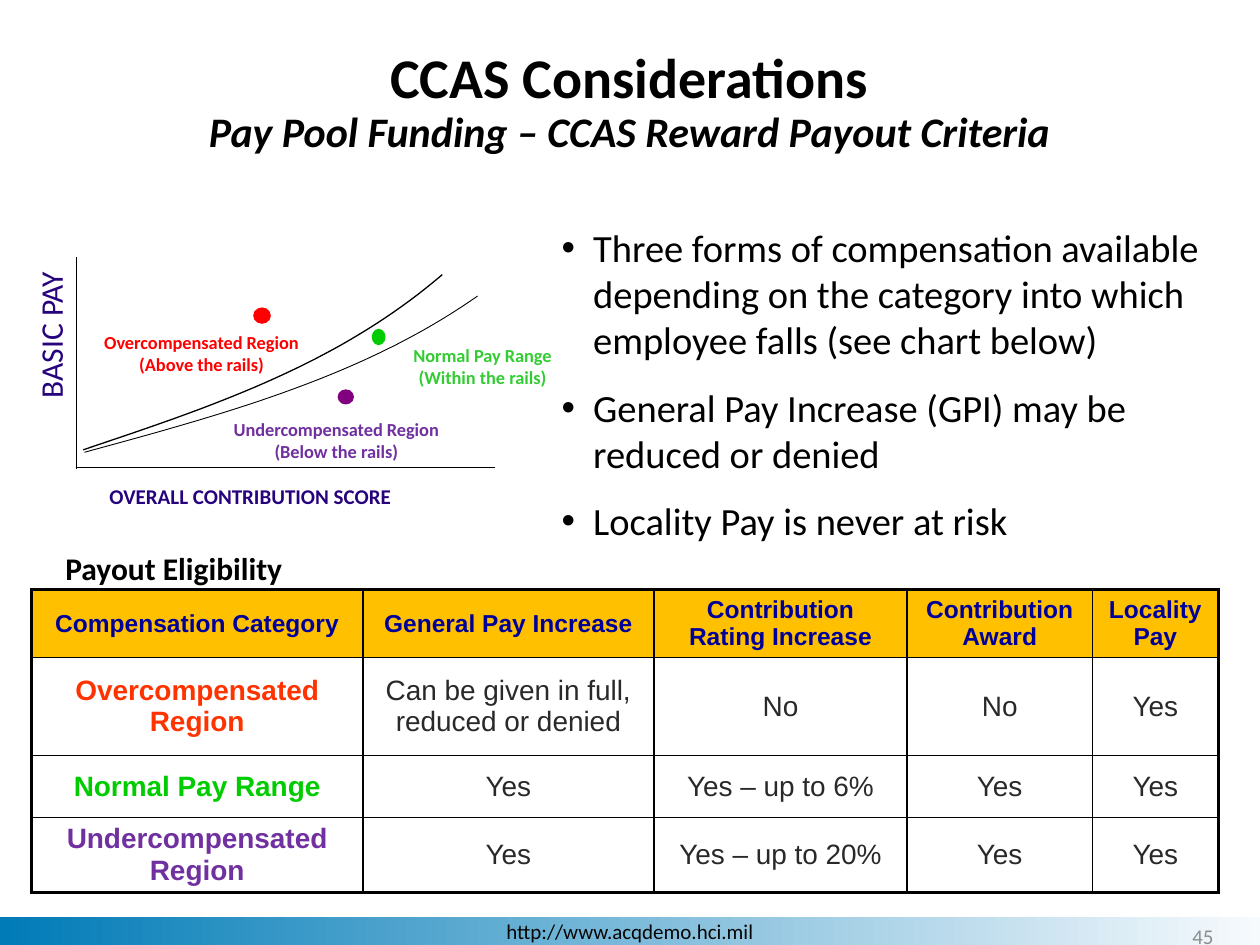
from pptx import Presentation
from pptx.dml.color import RGBColor
from pptx.enum.shapes import MSO_CONNECTOR, MSO_SHAPE
from pptx.enum.text import MSO_ANCHOR, PP_ALIGN
from pptx.oxml.ns import qn
from pptx.util import Inches, Pt
from lxml.etree import SubElement

COLORS = {
    "black": "000000", "footer": "060606", "number": "8C8C8C",
    "bar_dark": "007BB7", "bar_light": "F7FAFD", "axis": "27027D",
    "over": "FF0000", "normal": "33CC33", "under": "7030A0",
    "under_dot": "800080", "normal_dot": "00CC00", "over_row": "FF3300",
    "header_fill": "FFC000", "header": "000099", "cell": "292929",
}
ROWS = [
    ["Compensation Category", "General Pay Increase", "Contribution Rating Increase",
     "Contribution Award", "Locality Pay"],
    ["Overcompensated Region", "Can be given in full, reduced or denied", "No", "No", "Yes"],
    ["Normal Pay Range", "Yes", "Yes – up to 6%", "Yes", "Yes"],
    ["Undercompensated Region", "Yes", "Yes – up to 20%", "Yes", "Yes"],
]
CATEGORY_COLORS = [None, "over_row", "normal_dot", "under"]
COLUMN_WIDTHS = [2.63, 2.31, 2.01, 1.47, 1]
ROW_HEIGHTS = [0.49, 0.78, 0.49, 0.54]
BULLETS = [
    "Three forms of compensation available depending on the category into which "
    "employee falls (see chart below)",
    "General Pay Increase (GPI) may be reduced or denied",
    "Locality Pay is never at risk",
]


def rgb(name):
    return RGBColor.from_string(COLORS[name])


def add_run(paragraph, text, size, color, bold=False, italic=False, font="Calibri"):
    run = paragraph.add_run()
    run.text = text
    run.font.name = font
    run.font.size = Pt(size)
    run.font.bold = bold
    run.font.italic = italic
    run.font.color.rgb = rgb(color)


def add_frame(slide, left, top, width, height, wrap=True):
    box = slide.shapes.add_textbox(Inches(left), Inches(top), Inches(width), Inches(height))
    box.text_frame.word_wrap = wrap
    return box.text_frame


def add_label(slide, place, lines, size, color, bold=False, align=PP_ALIGN.LEFT, wrap=True):
    frame = add_frame(slide, *place, wrap=wrap)
    paragraph = frame.paragraphs[0]
    paragraph.alignment = align
    for index, line in enumerate(lines):
        if index:
            paragraph.add_line_break()
        add_run(paragraph, line, size, color, bold)
    return frame


def add_axis(slide, start, end, width):
    axis = slide.shapes.add_connector(
        MSO_CONNECTOR.STRAIGHT, *(Inches(value) for value in start + end))
    axis.line.color.rgb = rgb("black")
    axis.line.width = Pt(width)
    SubElement(axis._element.spPr, qn("a:effectLst"))


def add_rail(slide, controls, width, steps=40):
    """Draw a cubic curve through its four control points."""
    points = []
    for step in range(steps + 1):
        t = step / steps
        weights = ((1 - t) ** 3, 3 * t * (1 - t) ** 2, 3 * t ** 2 * (1 - t), t ** 3)
        points.append(tuple(
            Inches(sum(w * c[axis] for w, c in zip(weights, controls))) for axis in (0, 1)))
    builder = slide.shapes.build_freeform(*points[0])
    builder.add_line_segments(points[1:], close=False)
    rail = builder.convert_to_shape()
    rail.fill.background()
    rail.line.color.rgb = rgb("black")
    rail.line.width = Pt(width)
    rail.shadow.inherit = False


def add_dot(slide, left, top, width, height, color):
    dot = slide.shapes.add_shape(
        MSO_SHAPE.OVAL, Inches(left), Inches(top), Inches(width), Inches(height))
    dot.fill.solid()
    dot.fill.fore_color.rgb = rgb(color)
    dot.line.fill.background()
    dot.shadow.inherit = False


def add_footer(slide):
    bar = slide.shapes.add_shape(
        MSO_SHAPE.RECTANGLE, 0, Inches(7.28), Inches(10), Inches(0.22))
    bar.fill.gradient()
    bar.fill.gradient_angle = 0
    for stop, color in zip(bar.fill.gradient_stops, ("bar_dark", "bar_light")):
        stop.color.rgb = rgb(color)
    bar.line.fill.background()
    bar.shadow.inherit = False
    bar.text_frame.vertical_anchor = MSO_ANCHOR.MIDDLE
    address = bar.text_frame.paragraphs[0]
    address.alignment = PP_ALIGN.CENTER
    add_run(address, "http://www.acqdemo.hci.mil", 12, "footer")


def add_title(slide):
    frame = add_frame(slide, 0, 0.35, 9.99, 1.25)
    title, subtitle = frame.paragraphs[0], frame.add_paragraph()
    for paragraph in (title, subtitle):
        paragraph.alignment = PP_ALIGN.CENTER
        paragraph.line_spacing = 0.9
    add_run(title, "CCAS Considerations", 32, "black", bold=True)
    add_run(subtitle, "Pay Pool Funding – CCAS Reward Payout Criteria", 24, "black",
            bold=True, italic=True)


def add_bullets(slide):
    frame = add_frame(slide, 4.36, 1.73, 5.48, 2.66)
    for index, text in enumerate(BULLETS):
        paragraph = frame.add_paragraph() if index else frame.paragraphs[0]
        if index:
            paragraph.space_before = Pt(12)
        properties = paragraph._p.get_or_add_pPr()
        properties.set("marL", str(Inches(0.25)))
        properties.set("indent", str(-Inches(0.25)))
        SubElement(properties, qn("a:buFont"), typeface="Arial")
        SubElement(properties, qn("a:buChar"), char="•")
        add_run(paragraph, text, 22, "black")


def add_pay_plot(slide):
    # Axes and their names
    add_axis(slide, (0.61, 2.04), (0.61, 3.72), 0.5)
    add_axis(slide, (0.6, 3.71), (3.93, 3.71), 1)
    basic_pay = add_label(slide, (0.2, 2.15, 0.5, 1.11), ["BASIC PAY"], 18, "axis", wrap=False)
    basic_pay._txBody.bodyPr.set("vert", "vert270")
    add_label(slide, (0.77, 3.79, 3.02, 0.3), ["OVERALL CONTRIBUTION SCORE"], 12, "axis",
              bold=True, wrap=False)
    # Upper and lower rails
    add_rail(slide, [(0.66, 3.57), (1.67, 3.23), (2.67, 2.9), (3.51, 2.18)], 0.75)
    add_rail(slide, [(0.67, 3.59), (1.77, 3.29), (2.88, 2.99), (3.79, 2.35)], 0.5)
    # Regions
    add_dot(slide, 2.01, 2.44, 0.14, 0.13, "over")
    add_dot(slide, 2.68, 3.09, 0.13, 0.12, "under_dot")
    add_dot(slide, 2.95, 2.61, 0.11, 0.13, "normal_dot")
    regions = [
        ((0.28, 2.58, 2.64, 0.45), ["Overcompensated Region", "(Above the rails)"], "over"),
        ((2.96, 2.68, 1.74, 0.45), ["Normal Pay Range", "(Within the rails)"], "normal"),
        ((1.35, 3.27, 2.64, 0.45), ["Undercompensated Region", "(Below the rails)"], "under"),
    ]
    for place, lines, color in regions:
        add_label(slide, place, lines, 10.5, color, bold=True, align=PP_ALIGN.CENTER)


def set_borders(cell, widths):
    properties = cell._tc.get_or_add_tcPr()
    for index, (side, width) in enumerate(widths.items()):
        border = properties.makeelement(qn(f"a:{side}"), {"w": str(Pt(width))})
        fill = SubElement(border, qn("a:solidFill"))
        SubElement(fill, qn("a:srgbClr"), val=COLORS["black"])
        properties.insert(index, border)


def add_eligibility_table(slide):
    last_row, last_column = len(ROWS) - 1, len(COLUMN_WIDTHS) - 1
    table = slide.shapes.add_table(
        len(ROWS), len(COLUMN_WIDTHS), Inches(0.25), Inches(4.68),
        Inches(sum(COLUMN_WIDTHS)), Inches(sum(ROW_HEIGHTS))).table
    table.first_row = table.horz_banding = False
    for column, width in zip(table.columns, COLUMN_WIDTHS):
        column.width = Inches(width)
    for r, (values, height) in enumerate(zip(ROWS, ROW_HEIGHTS)):
        table.rows[r].height = Inches(height)
        for c, value in enumerate(values):
            cell = table.cell(r, c)
            cell.vertical_anchor = MSO_ANCHOR.MIDDLE
            if r == 0:
                cell.fill.solid()
                cell.fill.fore_color.rgb = rgb("header_fill")
                size, color = 14, "header"
            else:
                cell.fill.background()
                size, color = 16, "cell" if c else CATEGORY_COLORS[r]
            paragraph = cell.text_frame.paragraphs[0]
            paragraph.alignment = PP_ALIGN.CENTER
            add_run(paragraph, value, size, color, bold=r == 0 or c == 0, font="Arial")
            outer = {"lnL": c == 0, "lnR": c == last_column,
                     "lnT": r == 0, "lnB": r == last_row}
            set_borders(cell, {side: 2.25 if edge else 1 for side, edge in outer.items()})


def main():
    deck = Presentation()
    deck.slide_width, deck.slide_height = Inches(10), Inches(7.5)
    slide = deck.slides.add_slide(deck.slide_layouts[6])
    add_footer(slide)
    add_eligibility_table(slide)
    add_bullets(slide)
    add_pay_plot(slide)
    add_label(slide, (0.42, 4.31, 2.58, 0.4), ["Payout Eligibility"], 18, "black", bold=True)
    add_title(slide)
    # Slide number
    number = add_label(slide, (7.48, 7.23, 2.25, 0.4), ["45"], 12, "number",
                       align=PP_ALIGN.RIGHT)
    number.vertical_anchor = MSO_ANCHOR.MIDDLE
    deck.save("out.pptx")


if __name__ == "__main__":
    main()
